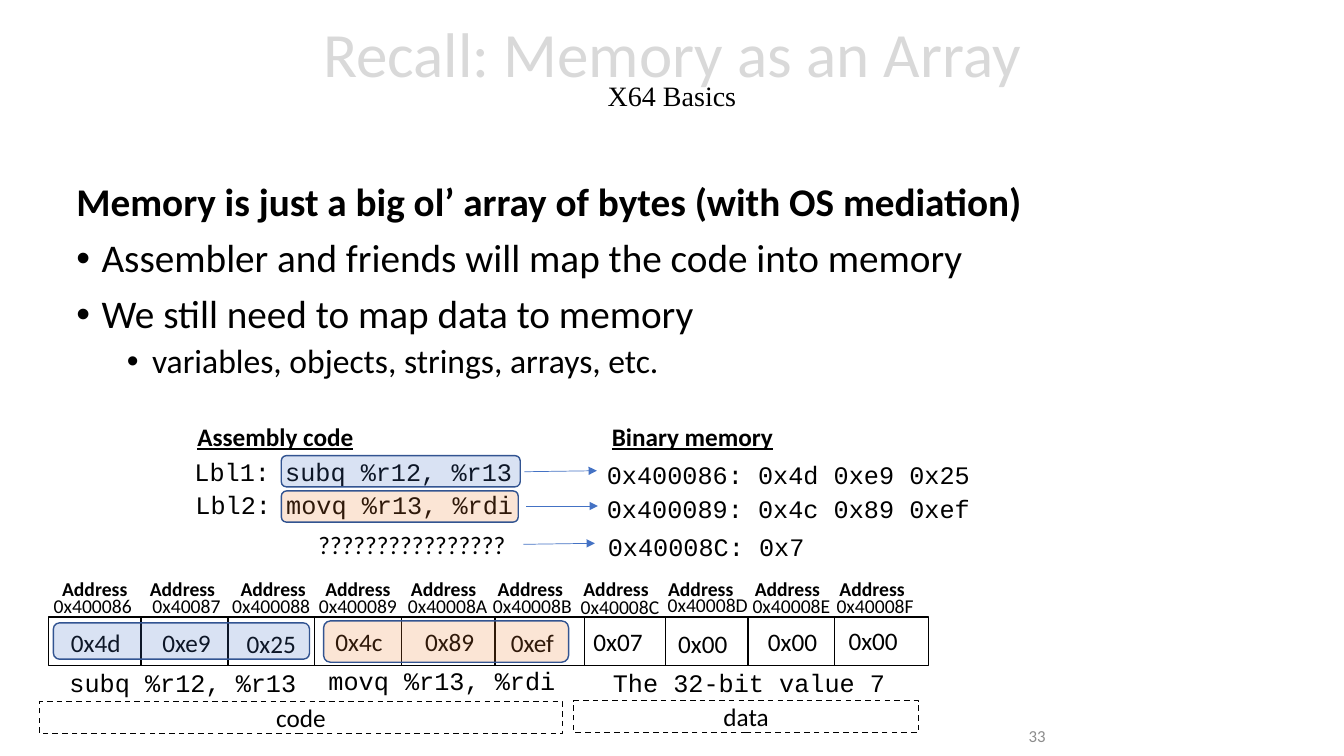
from collections import namedtuple

from lxml.etree import SubElement
from pptx import Presentation
from pptx.dml.color import RGBColor
from pptx.enum.dml import MSO_LINE
from pptx.enum.shapes import MSO_CONNECTOR, MSO_SHAPE
from pptx.enum.text import MSO_ANCHOR, MSO_AUTO_SIZE, PP_ALIGN
from pptx.oxml.ns import qn
from pptx.util import Inches, Pt

BLACK, WHITE, GREY = "000000", "FFFFFF", "8C8C8C"
BLUE, ORANGE, NAVY = "4472C4", "ED7D31", "325491"
BODY, CODE, SERIF = "Calibri", "Courier New", "Times New Roman"
CELL_WIDTH, ADDRESS_WIDTH, VALUE_WIDTH = 0.93, 0.92, 0.69

# One byte of memory: left edge of its cell, then the centres and tops of its labels
Byte = namedtuple("Byte", "left header address address_x address_y value value_x value_y")
MEMORY = [
    Byte(0.48, 0.94, "0x400086", 0.92, 5.84, "0x4d", 0.95, 6.17),
    Byte(1.40, 1.81, "0x40087", 1.85, 5.84, "0xe9", 1.85, 6.17),
    Byte(2.26, 2.71, "0x400088", 2.69, 5.84, "0x25", 2.69, 6.18),
    Byte(3.12, 3.55, "0x400089", 3.55, 5.84, "0x4c", 3.56, 6.16),
    Byte(3.98, 4.40, "0x40008A", 4.44, 5.84, "0x89", 4.46, 6.16),
    Byte(4.87, 5.26, "0x40008B", 5.28, 5.84, "0xef", 5.28, 6.17),
    Byte(5.67, 6.11, "0x40008C", 6.15, 5.85, "0x07", 6.13, 6.16),
    Byte(6.56, 6.95, "0x40008D", 7.02, 5.83, "0x00", 6.97, 6.18),
    Byte(7.42, 7.81, "0x40008E", 7.85, 5.84, "0x00", 7.86, 6.16),
    Byte(8.28, 8.65, "0x40008F", 8.68, 5.84, "0x00", 8.66, 6.15),
]
# Cells overlap slightly, so the stacking order decides which borders show
STACKING = [7, 8, 9, 6, 5, 0, 1, 2, 3, 4]


def colour(value):
    return RGBColor.from_string(value)


def add_span(para, text, size=18, font=BODY, color=BLACK, bold=False, underline=False):
    span = para.add_run()
    span.text = text
    span.font.size = Pt(size)
    span.font.name = font
    span.font.bold = bold
    span.font.underline = underline
    span.font.color.rgb = colour(color)


def add_text(page, text, left, top, width, height=0.4, align=PP_ALIGN.LEFT,
             anchor=MSO_ANCHOR.TOP, wrap=False, inset=0.1, **style):
    box = page.shapes.add_textbox(Inches(left), Inches(top), Inches(width), Inches(height))
    frame = box.text_frame
    frame.word_wrap = wrap
    frame.vertical_anchor = anchor
    frame.margin_left = frame.margin_right = Inches(inset)
    para = frame.paragraphs[0]
    para.alignment = align
    add_span(para, text, **style)


def add_box(page, left, top, width, height, kind=MSO_SHAPE.RECTANGLE, fill=WHITE,
            line=BLACK, alpha=None, dashed=False, text=None):
    shape = page.shapes.add_shape(kind, Inches(left), Inches(top), Inches(width), Inches(height))
    shape.shadow.inherit = False
    shape.fill.solid()
    shape.fill.fore_color.rgb = colour(fill)
    if alpha:
        fill_color = shape.element.spPr.find(qn("a:solidFill")).find(qn("a:srgbClr"))
        SubElement(fill_color, qn("a:alpha"), val=str(alpha * 1000))
    shape.line.color.rgb = colour(line)
    shape.line.width = Pt(1)
    if dashed:
        shape.line.dash_style = MSO_LINE.DASH
    if text:
        shape.text_frame.vertical_anchor = MSO_ANCHOR.MIDDLE
        para = shape.text_frame.paragraphs[0]
        para.alignment = PP_ALIGN.CENTER
        add_span(para, text)


def add_highlight(page, left, top, width, height, fill):
    add_box(page, left, top, width, height, kind=MSO_SHAPE.ROUNDED_RECTANGLE,
            fill=fill, line=NAVY, alpha=20)


def add_arrow(page, start_x, start_y, end_x, end_y):
    arrow = page.shapes.add_connector(MSO_CONNECTOR.STRAIGHT, Inches(start_x), Inches(start_y),
                                      Inches(end_x), Inches(end_y))
    arrow.line.color.rgb = colour(BLUE)
    arrow.line.width = Pt(0.5)
    properties = arrow.element.spPr
    SubElement(properties.find(qn("a:ln")), qn("a:tailEnd"), type="triangle")
    SubElement(properties, qn("a:effectLst"))


def add_title(page):
    title = page.shapes.title
    title.left, title.top = Inches(0), Inches(0)
    title.width, title.height = Inches(13.33), Inches(1.45)
    frame = title.text_frame
    frame.auto_size = MSO_AUTO_SIZE.NONE
    frame.vertical_anchor = MSO_ANCHOR.MIDDLE
    para = frame.paragraphs[0]
    para.alignment = PP_ALIGN.CENTER
    para.line_spacing = 0.7
    add_span(para, "Recall: Memory as an Array", size=45, color="D9D9D9")
    para.add_line_break()
    add_span(para, "X64 Basics", size=20, font=SERIF)


def add_points(page):
    box = page.shapes.add_textbox(Inches(0.66), Inches(1.76), Inches(9.67), Inches(2.26))
    frame = box.text_frame
    frame.word_wrap = True
    points = [
        ("Memory is just a big ol’ array of bytes (with OS mediation)", None, 28, 10),
        ("Assembler and friends will map the code into memory", 0.25, 28, 10),
        ("We still need to map data to memory", 0.25, 28, 10),
        ("variables, objects, strings, arrays, etc.", 0.75, 24, 5),
    ]
    for index, (text, indent, size, space) in enumerate(points):
        para = frame.add_paragraph() if index else frame.paragraphs[0]
        para.line_spacing = 0.9
        para.space_before = Pt(space)
        add_span(para, text, size=size, bold=indent is None)
        if indent:
            para.level = 1 if indent > 0.5 else 0
            properties = para._p.get_or_add_pPr()
            properties.set("marL", str(Inches(indent)))
            properties.set("indent", str(-Inches(0.25)))
            SubElement(properties, qn("a:buFont"), typeface="Arial")
            SubElement(properties, qn("a:buChar"), char="•")


def add_memory(page):
    for index in STACKING:
        add_box(page, MEMORY[index].left, 6.12, CELL_WIDTH, 0.48)
    for byte in MEMORY:
        labels = [("Address", byte.header, 5.67, True),
                  (byte.address, byte.address_x, byte.address_y, False)]
        for text, centre, top, bold in labels:
            add_text(page, text, centre - ADDRESS_WIDTH / 2, top, ADDRESS_WIDTH, 0.34,
                     align=PP_ALIGN.CENTER, wrap=True, inset=0, size=14, bold=bold)
        add_text(page, byte.value, byte.value_x - VALUE_WIDTH / 2, byte.value_y,
                 VALUE_WIDTH, align=PP_ALIGN.CENTER)


def main():
    deck = Presentation()
    deck.slide_width, deck.slide_height = Inches(13.33), Inches(7.5)
    page = deck.slides.add_slide(deck.slide_layouts[5])

    # Title, page number and points
    add_title(page)
    add_text(page, "33", 8.22, 7.1, 2.25, align=PP_ALIGN.RIGHT, anchor=MSO_ANCHOR.MIDDLE,
             wrap=True, size=12, color=GREY)
    add_points(page)

    # Memory cells with what they hold
    add_memory(page)
    add_box(page, 0.39, 6.96, 5.19, 0.32, dashed=True, text="code")
    add_box(page, 5.69, 6.95, 3.42, 0.32, dashed=True, text="data")
    add_text(page, "subq %r12, %r13", 0.59, 6.57, 2.46, font=CODE)
    add_text(page, "movq %r13, %rdi", 3.16, 6.55, 2.46, font=CODE)
    add_text(page, "The 32-bit value 7", 5.98, 6.57, 2.92, font=CODE)

    # Assembly code beside binary memory
    add_text(page, "Assembly code", 1.86, 4.13, 1.76, bold=True, underline=True)
    add_text(page, "Binary memory", 5.97, 4.13, 1.81, bold=True, underline=True)
    add_text(page, "Lbl1: subq %r12, %r13", 1.83, 4.48, 3.37, font=CODE)
    add_text(page, "Lbl2: movq %r13, %rdi", 1.84, 4.81, 3.37, font=CODE)
    add_text(page, "????????????????", 3.06, 5.2, 2.08)
    add_text(page, "0x400086: 0x4d 0xe9 0x25", 5.92, 4.51, 3.82, font=CODE)
    add_text(page, "0x400089: 0x4c 0x89 0xef", 5.92, 4.84, 3.82, font=CODE)
    add_text(page, "0x40008C: 0x7", 5.93, 5.22, 2.16, font=CODE)

    # Highlights of the two instructions, and arrows
    add_highlight(page, 2.79, 4.87, 2.35, 0.31, ORANGE)
    add_highlight(page, 2.79, 4.52, 2.37, 0.31, BLUE)
    add_highlight(page, 0.53, 6.18, 2.54, 0.36, BLUE)
    add_highlight(page, 3.21, 6.16, 2.43, 0.41, ORANGE)
    add_arrow(page, 5.2, 4.68, 5.92, 4.67)
    add_arrow(page, 5.22, 5.02, 5.93, 5.02)
    add_arrow(page, 5.19, 5.4, 5.9, 5.39)

    deck.save("out.pptx")


if __name__ == "__main__":
    main()
